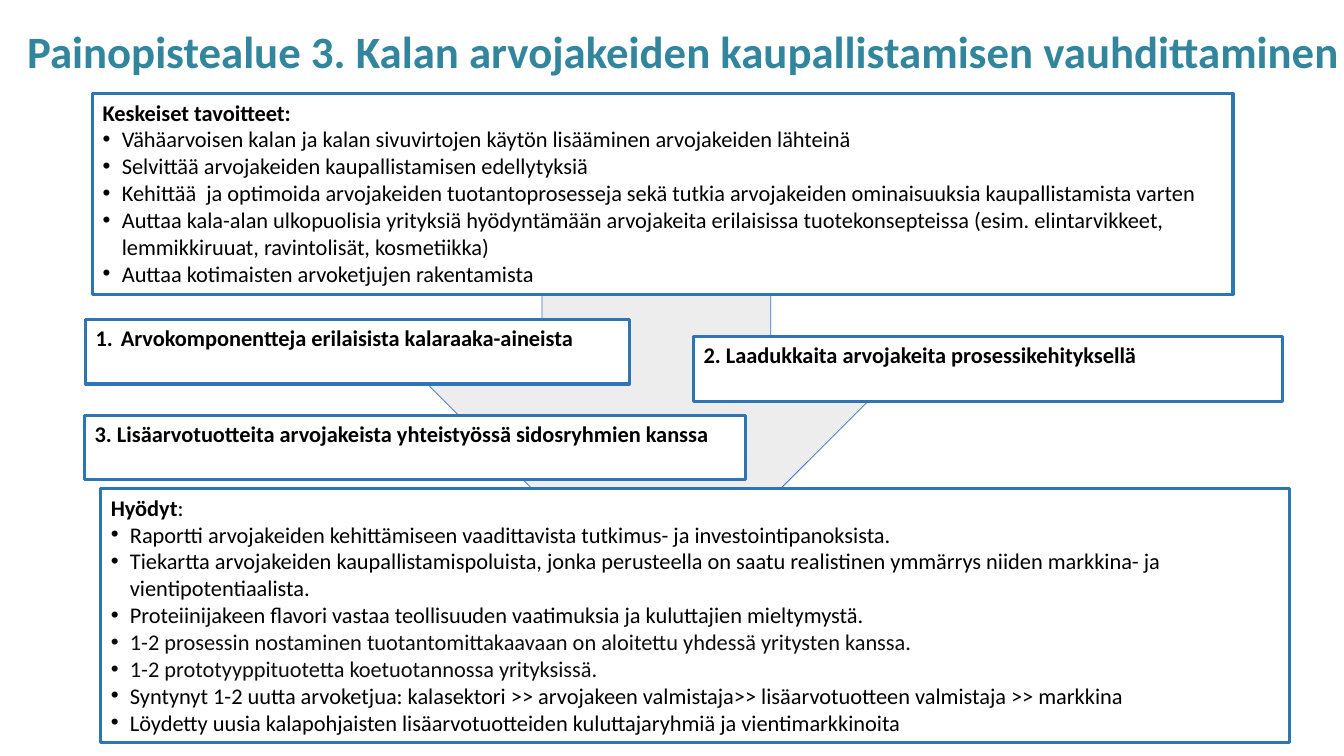
from dataclasses import dataclass

from lxml.etree import SubElement
from pptx import Presentation
from pptx.dml.color import RGBColor
from pptx.enum.shapes import MSO_SHAPE
from pptx.enum.text import MSO_ANCHOR, PP_ALIGN
from pptx.oxml.ns import qn
from pptx.util import Inches, Pt


@dataclass(frozen=True)
class Theme:
    face: str = "Calibri"
    title: RGBColor = RGBColor(0x31, 0x85, 0x9C)
    ink: RGBColor = RGBColor(0, 0, 0)
    soft: RGBColor = RGBColor(0x0D, 0x0D, 0x0D)
    paper: RGBColor = RGBColor(0xFF, 0xFF, 0xFF)
    frame: RGBColor = RGBColor(0x2E, 0x75, 0xB6)
    arrow: RGBColor = RGBColor(0xED, 0xED, 0xED)
    edge: RGBColor = RGBColor(0x44, 0x72, 0xC4)
    head: Pt = Pt(32)
    body: Pt = Pt(16)
    thick: Pt = Pt(2.25)
    thin: Pt = Pt(0.5)


theme = Theme()


def draw(kind, place, fill, line, width):
    """Add a filled, outlined preset shape at place (left, top, width, height)."""
    shape = slide.shapes.add_shape(kind, *map(Inches, place))
    shape.shadow.inherit = False
    shape.fill.solid()
    shape.fill.fore_color.rgb = fill
    shape.line.color.rgb = line
    shape.line.width = width
    return shape


def mark(para, indent, tag, **attrs):
    """Give a paragraph a hanging indent and a bullet or number."""
    props = para._p.get_or_add_pPr()
    props.set("marL", str(Inches(indent)))
    props.set("indent", str(-Inches(indent)))
    if tag == "buChar":
        SubElement(props, qn("a:buFont"), typeface="Arial")
    SubElement(props, qn("a:" + tag), **attrs)


goals = [
    ("Vähäarvoisen kalan ja kalan sivuvirtojen käytön lisääminen arvojakeiden lähteinä", theme.ink),
    ("Selvittää arvojakeiden kaupallistamisen edellytyksiä", theme.ink),
    ("Kehittää  ja optimoida arvojakeiden tuotantoprosesseja sekä tutkia arvojakeiden "
     "ominaisuuksia kaupallistamista varten", theme.ink),
    ("Auttaa kala-alan ulkopuolisia yrityksiä hyödyntämään arvojakeita erilaisissa "
     "tuotekonsepteissa (esim. elintarvikkeet, lemmikkiruuat, ravintolisät, kosmetiikka)", theme.ink),
    ("Auttaa kotimaisten arvoketjujen rakentamista", theme.ink),
]
gains = [
    ("Raportti arvojakeiden kehittämiseen vaadittavista tutkimus- ja investointipanoksista.", theme.ink),
    ("Tiekartta arvojakeiden kaupallistamispoluista, jonka perusteella on saatu realistinen "
     "ymmärrys niiden markkina- ja vientipotentiaalista.", theme.ink),
    ("Proteiinijakeen flavori vastaa teollisuuden vaatimuksia ja kuluttajien mieltymystä.", theme.ink),
    ("1-2 prosessin nostaminen tuotantomittakaavaan on aloitettu yhdessä yritysten kanssa.", theme.soft),
    ("1-2 prototyyppituotetta koetuotannossa yrityksissä.", theme.soft),
    ("Syntynyt 1-2 uutta arvoketjua: kalasektori >> arvojakeen valmistaja>> "
     "lisäarvotuotteen valmistaja >> markkina", theme.ink),
    ("Löydetty uusia kalapohjaisten lisäarvotuotteiden kuluttajaryhmiä ja vientimarkkinoita", theme.ink),
]
# Each box: place, bold heading, plain tail of the heading, numbered, bullets
boxes = [
    ((0.84, 4.12, 6.55, 0.64),
     "3. Lisäarvotuotteita arvojakeista yhteistyössä sidosryhmien kanssa", "", False, []),
    ((1, 4.85, 11.79, 2.52), "Hyödyt", ":", False, gains),
    ((0.92, 0.93, 11.31, 1.99), "Keskeiset tavoitteet:", "", False, goals),
    ((0.85, 3.17, 5.39, 0.64),
     "Arvokomponentteja erilaisista kalaraaka-aineista", "", True, []),
    ((6.88, 3.34, 5.84, 0.64),
     "2. Laadukkaita arvojakeita prosessikehityksellä", "", False, []),
]

deck = Presentation()
deck.slide_width, deck.slide_height = Inches(13.33), Inches(7.5)
slide = deck.slides.add_slide(deck.slide_layouts[6])

title = slide.shapes.add_textbox(*map(Inches, (0.17, 0.08, 13.36, 0.91))).text_frame
title.word_wrap = True
title.vertical_anchor = MSO_ANCHOR.MIDDLE
para = title.paragraphs[0]
para.text = "Painopistealue 3. Kalan arvojakeiden kaupallistamisen vauhdittaminen"
para.line_spacing = 0.9
para.font.name, para.font.size = theme.face, theme.head
para.font.bold = True
para.font.color.rgb = theme.title

draw(MSO_SHAPE.DOWN_ARROW, (4.24, 1.54, 4.54, 4.54), theme.arrow, theme.edge, theme.thin)

for place, head, tail, numbered, items in boxes:
    shape = draw(MSO_SHAPE.RECTANGLE, place, theme.paper, theme.frame, theme.thick)
    frame = shape.text_frame
    frame.word_wrap = True
    frame.vertical_anchor = MSO_ANCHOR.TOP
    para = frame.paragraphs[0]
    para.text = head
    if numbered:
        mark(para, 0.25, "buAutoNum", type="arabicPeriod")
    para.font.bold = True
    para.font.color.rgb = theme.ink
    if tail:
        run = para.add_run()
        run.text = tail
        run.font.bold = False
    for text, ink in items:
        para = frame.add_paragraph()
        para.text = text
        mark(para, 0.19, "buChar", char="•")
        para.font.color.rgb = ink
    for para in frame.paragraphs:
        para.alignment = PP_ALIGN.LEFT
        para.font.name, para.font.size = theme.face, theme.body

deck.save("out.pptx")
